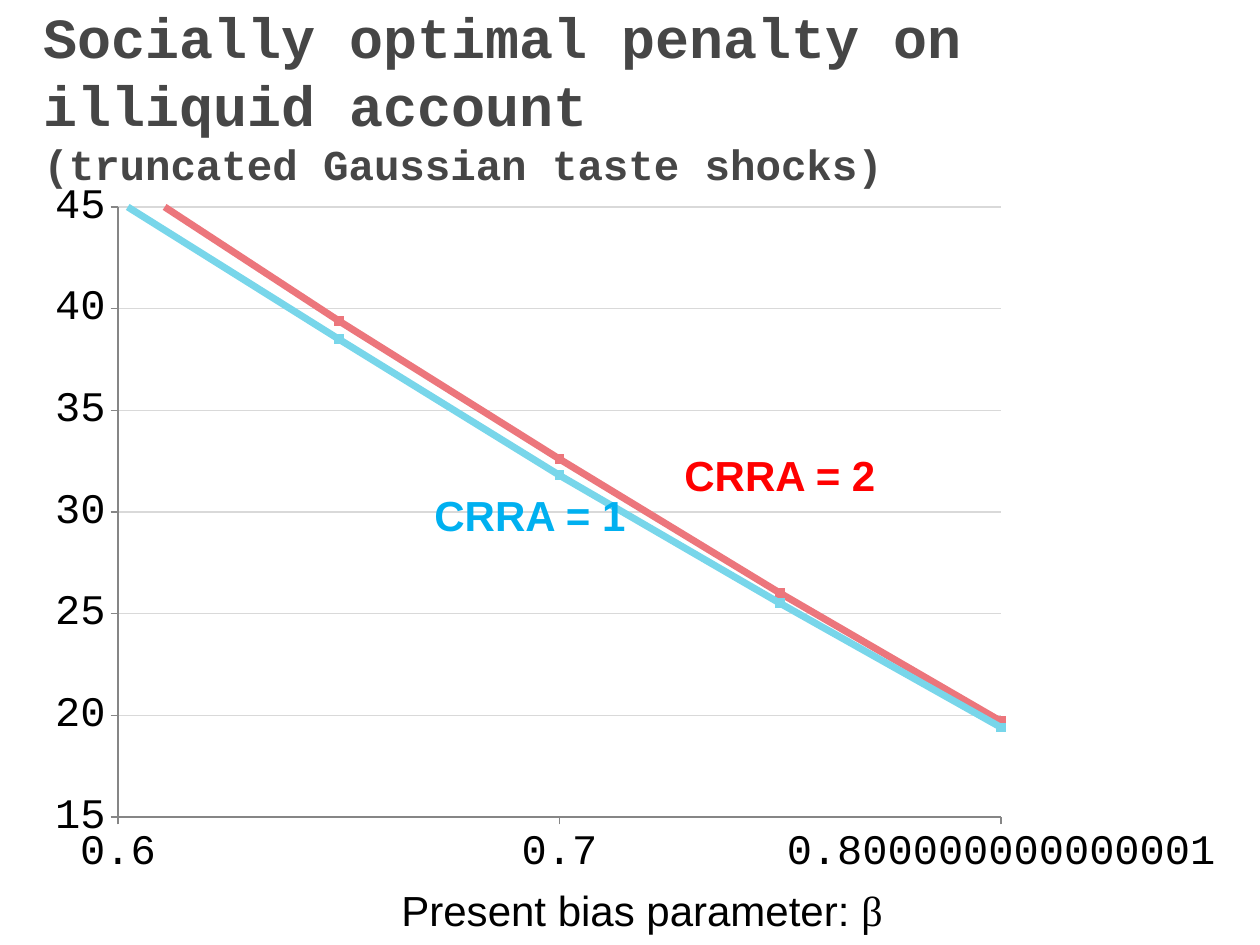
from pptx import Presentation
from pptx.chart.data import XyChartData
from pptx.dml.color import RGBColor
from pptx.enum.chart import XL_CHART_TYPE as ChartType, XL_MARKER_STYLE as Marker, XL_TICK_MARK as Tick
from pptx.enum.text import MSO_ANCHOR as Anchor
from pptx.oxml import parse_xml
from pptx.oxml.ns import nsdecls
from pptx.util import Pt

PX = 914400 // 126
SLIDE = (1260, 945)

BLACK = RGBColor(0x00, 0x00, 0x00)
DARK = RGBColor(0x46, 0x46, 0x46)
AXIS = RGBColor(0x86, 0x86, 0x86)
GRID = RGBColor(0xD9, 0xD9, 0xD9)
RED = RGBColor(0xFF, 0x00, 0x00)
BLUE = RGBColor(0x00, 0xB0, 0xF0)
CYAN = RGBColor(0x78, 0xD6, 0xEA)
PINK = RGBColor(0xEC, 0x76, 0x7C)

MONO, SANS, SERIF = "Courier New", "Arial", "Times New Roman"

# Paragraphs of the title: text, size
TITLE_BOX = (31, 2, 1207, 188)
TITLE = [
    ("Socially optimal penalty on illiquid account", 32.4),
    ("(truncated Gaussian taste shocks)", 24.3),
]

# Labels: box, colour, bold, runs of (text, font)
LABELS = [
    ((672, 444, 218, 63), RED, True, [("CRRA = 2", SANS)]),
    ((422, 484, 218, 63), BLUE, True, [("CRRA = 1", SANS)]),
    ((389, 879, 512, 63), BLACK, False, [("Present bias parameter: ", SANS), ("β", SERIF)]),
]

CHART_BOX = (31, 168, 1207, 725)
PLOT_BOX = (118, 207, 883, 610)
BETAS = [0.6, 0.65, 0.7, 0.75, 0.8]
SERIES = [
    ("Series 1", CYAN, [45.3, 38.5, 31.8, 25.5, 19.4]),
    ("Series 2", PINK, [46.5, 39.4, 32.6, 26.0, 19.7]),
]
# Axes: minimum, maximum, step, number format
X_AXIS = (0.6, 0.8, 0.1, '[>0.75]"0.800000000000001";0.0')
Y_AXIS = (15, 45, 5, "General")


def emu(box):
    return [v * PX for v in box]


def set_font(font, **values):
    color = values.pop("color")
    for key, value in values.items():
        setattr(font, key, value)
    font.color.rgb = color


def add_text_box(slide, box, wrap, inset):
    tf = slide.shapes.add_textbox(*emu(box)).text_frame
    tf.word_wrap = wrap
    tf.vertical_anchor = Anchor.TOP
    tf.margin_top = tf.margin_bottom = inset * PX
    return tf


def add_run(p, text, **values):
    r = p.add_run()
    r.text = text
    set_font(r.font, **values)


def add_title(slide):
    tf = add_text_box(slide, TITLE_BOX, True, 0)
    for i, (text, size) in enumerate(TITLE):
        p = tf.add_paragraph() if i else tf.paragraphs[0]
        add_run(p, text, name=MONO, size=Pt(size), bold=True, color=DARK)


def style_axis(axis, low, high, step, number_format):
    values = dict(minimum_scale=low, maximum_scale=high, major_unit=step,
                  major_tick_mark=Tick.OUTSIDE, minor_tick_mark=Tick.NONE)
    for key, value in values.items():
        setattr(axis, key, value)
    labels = axis.tick_labels
    labels.number_format = number_format
    labels.number_format_is_linked = False
    set_font(labels.font, name=MONO, size=Pt(24), color=BLACK)
    axis.format.line.color.rgb = AXIS
    axis.format.line.width = Pt(0.75)


def place_plot(chart):
    """Fix the inner plot area, given as fractions of the chart frame."""
    left, top, width, height = CHART_BOX
    x, y, w, h = PLOT_BOX
    fractions = dict(x=(x - left) / width, y=(y - top) / height, w=w / width, h=h / height)
    modes = '<c:xMode val="edge"/><c:yMode val="edge"/>'
    sizes = "".join(f'<c:{k} val="{v:.4f}"/>' for k, v in fractions.items())
    layout = parse_xml(
        f'<c:layout {nsdecls("c")}><c:manualLayout><c:layoutTarget val="inner"/>'
        f"{modes}{sizes}</c:manualLayout></c:layout>")
    plot_area = chart.element.chart.plotArea
    for old in plot_area.findall(layout.tag):
        plot_area.remove(old)
    plot_area.insert(0, layout)


def add_penalty_chart(slide):
    data = XyChartData()
    for name, _, penalties in SERIES:
        series = data.add_series(name)
        for beta, penalty in zip(BETAS, penalties):
            series.add_data_point(beta, penalty)
    chart = slide.shapes.add_chart(ChartType.XY_SCATTER_LINES, *emu(CHART_BOX), data).chart
    chart.has_legend = chart.has_title = False
    set_font(chart.font, name=MONO, size=Pt(10), color=BLACK)
    chart.plots[0].vary_by_categories = False

    style_axis(chart.category_axis, *X_AXIS)
    style_axis(chart.value_axis, *Y_AXIS)
    chart.category_axis.has_major_gridlines = False
    chart.value_axis.has_major_gridlines = True
    grid = chart.value_axis.major_gridlines.format.line
    grid.color.rgb, grid.width = GRID, Pt(0.75)

    for series, (_, color, _) in zip(chart.plots[0].series, SERIES):
        series.smooth = False
        series.format.line.color.rgb = color
        series.format.line.width = Pt(4)
        marker = series.marker
        marker.style, marker.size = Marker.SQUARE, 5
        marker.format.fill.solid()
        marker.format.fill.fore_color.rgb = color
        marker.format.line.color.rgb = color
    place_plot(chart)


def add_labels(slide):
    for box, color, bold, runs in LABELS:
        p = add_text_box(slide, box, False, 6).paragraphs[0]
        for text, font in runs:
            add_run(p, text, name=font, size=Pt(24), bold=bold, color=color)


def main():
    prs = Presentation()
    prs.slide_width, prs.slide_height = emu(SLIDE)
    slide = prs.slides.add_slide(prs.slide_layouts[6])
    add_title(slide)
    add_penalty_chart(slide)
    add_labels(slide)
    prs.save("out.pptx")


if __name__ == "__main__":
    main()
